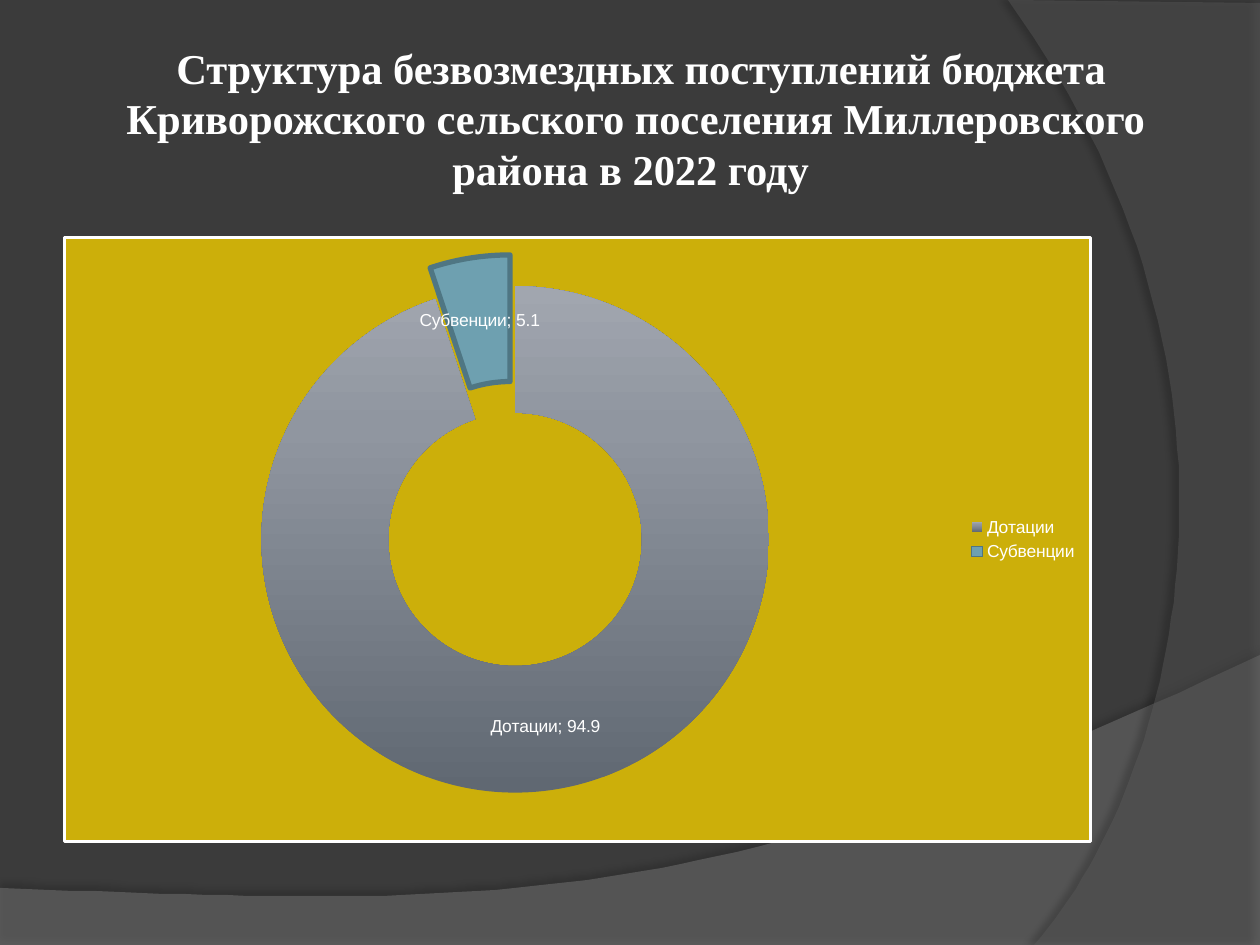
from copy import deepcopy
from pptx import Presentation
from pptx.chart.data import CategoryChartData
from pptx.dml.color import RGBColor
from pptx.enum.chart import XL_CHART_TYPE, XL_LEGEND_POSITION
from pptx.enum.text import MSO_ANCHOR, PP_ALIGN
from pptx.oxml import parse_xml
from pptx.oxml.ns import nsdecls
from pptx.util import Pt

PX = 914400 / 126
TITLE = (" Структура безвозмездных поступлений бюджета Криворожского "
         "сельского поселения Миллеровского района в 2022 году ")
DATA = {"Дотации": 94.9, "Субвенции": 5.1}
GRAD = [(0, "606872"), (0.72, "9096A0"), (1, "A1A6AF")]
WAVES = [
    dict(line=[(0, 946), (1260, 946), (1260, 655)],
         curve=[(1260, 655), (704, 919), (493, 906), (0, 888)],
         fill="7F7F7F", alpha=45, shade=35, dist=3.5, angle=270),
    dict(line=[(1260, 3), (1260, 945), (1034, 945)],
         curve=[(1034, 945), (1178, 780), (1283, 378), (1008, 0)],
         fill="5E5E5E", alpha=40, shade=45, dist=4, angle=180),
]


def emu(*nums):
    return [round(n * PX) for n in nums]


def color(code):
    return RGBColor.from_string(code)


def bend(ends, steps=60):
    """Return points along a cubic curve."""
    spots = []
    for step in range(1, steps + 1):
        t = step / steps
        mix = ((1 - t) ** 3, 3 * t * (1 - t) ** 2, 3 * t * t * (1 - t), t ** 3)
        spots.append(tuple(sum(m * p[axis] for m, p in zip(mix, ends))
                           for axis in (0, 1)))
    return spots


def add_wave(slide, wave):
    """Draw one translucent background wave with its shadow."""
    first, *rest = wave["line"] + bend(wave["curve"])
    pen = slide.shapes.build_freeform(*first, scale=PX)
    pen.add_line_segments(rest, close=True)
    shape = pen.convert_to_shape()
    shape.fill.solid()
    shape.fill.fore_color.rgb = color(wave["fill"])
    shape.line.fill.background()
    shape.shadow.inherit = False
    tint = shape.element.xpath("./p:spPr/a:solidFill/a:srgbClr")[0]
    tint.append(parse_xml(f'<a:alpha {nsdecls("a")} val="{wave["alpha"] * 1000}"/>'))
    glow = shape.element.xpath("./p:spPr/a:effectLst")[0]
    glow.append(parse_xml(
        f'<a:outerShdw {nsdecls("a")} blurRad="{Pt(4)}" dist="{Pt(wave["dist"])}" '
        f'dir="{wave["angle"] * 60000}" algn="ctr" rotWithShape="0">'
        f'<a:srgbClr val="000000"><a:alpha val="{wave["shade"] * 1000}"/>'
        '</a:srgbClr></a:outerShdw>'))


def add_title(slide):
    """Place the centred heading."""
    frame = slide.shapes.add_textbox(*emu(69, 25, 1134, 186)).text_frame
    frame.word_wrap = True
    frame.vertical_anchor = MSO_ANCHOR.MIDDLE
    frame.margin_left = frame.margin_right = emu(6)[0]
    para = frame.paragraphs[0]
    para.alignment = PP_ALIGN.CENTER
    para.line_spacing = Pt(29)
    run = para.add_run()
    run.text = TITLE
    run.font.name, run.font.size, run.font.bold = "Times New Roman", Pt(24.3), True
    run.font.color.rgb = color("FFFFFF")


def style(font):
    font.name, font.size = "Arial", Pt(10)
    font.color.rgb = color("FFFFFF")


def add_ring(slide):
    """Add the doughnut chart with one pulled-out slice."""
    data = CategoryChartData()
    data.categories = list(DATA)
    data.add_series("Series 1", list(DATA.values()))
    chart = slide.shapes.add_chart(
        XL_CHART_TYPE.DOUGHNUT, *emu(63, 236, 1029, 607), data).chart
    chart.has_title = False
    style(chart.font)
    chart.has_legend = True
    chart.legend.position = XL_LEGEND_POSITION.RIGHT
    chart.legend.include_in_layout = False
    style(chart.legend.font)
    plot = chart.plots[0]
    plot.vary_by_categories = True
    series = plot.series[0]
    labels = series.data_labels
    labels.show_value = labels.show_category_name = True
    labels.show_percentage = labels.show_legend_key = False
    style(labels.font)

    grant, subsidy = (series.points[i].format for i in range(2))
    grant.fill.gradient()
    grant.fill.gradient_angle = 90
    root = chart.element
    stops = root.xpath(".//a:gsLst")[0]
    stops.append(deepcopy(stops[0]))
    for stop, (spot, code) in zip(grant.fill.gradient_stops, GRAD):
        stop.position = spot
        stop.color.rgb = color(code)
    grant.line.fill.background()
    subsidy.fill.solid()
    subsidy.fill.fore_color.rgb = color("6EA0B0")
    subsidy.line.color.rgb = color("4F7683")
    subsidy.line.width = Pt(3)

    look = root.xpath(".//c:dPt[c:idx/@val='1']/c:spPr")[0]
    look.addprevious(parse_xml(f'<c:explosion {nsdecls("c")} val="25"/>'))
    last = root.xpath(".//c:ser/c:dLbls/c:showBubbleSize")[0]
    last.addnext(parse_xml(f'<c:separator {nsdecls("c")}>; </c:separator>'))
    root.xpath("./c:chart")[0].addnext(parse_xml(
        f'<c:spPr {nsdecls("c", "a")}><a:solidFill><a:srgbClr val="CCAF0A"/></a:solidFill>'
        f'<a:ln w="{Pt(1.5)}"><a:solidFill><a:srgbClr val="FFFFFF"/></a:solidFill></a:ln>'
        '</c:spPr>'))


def main():
    deck = Presentation()
    deck.slide_width, deck.slide_height = emu(1260, 945)
    slide = deck.slides.add_slide(deck.slide_layouts[6])
    slide.background.fill.solid()
    slide.background.fill.fore_color.rgb = color("3B3B3B")
    for wave in WAVES:
        add_wave(slide, wave)
    add_title(slide)
    add_ring(slide)
    deck.save("out.pptx")


if __name__ == "__main__":
    main()
